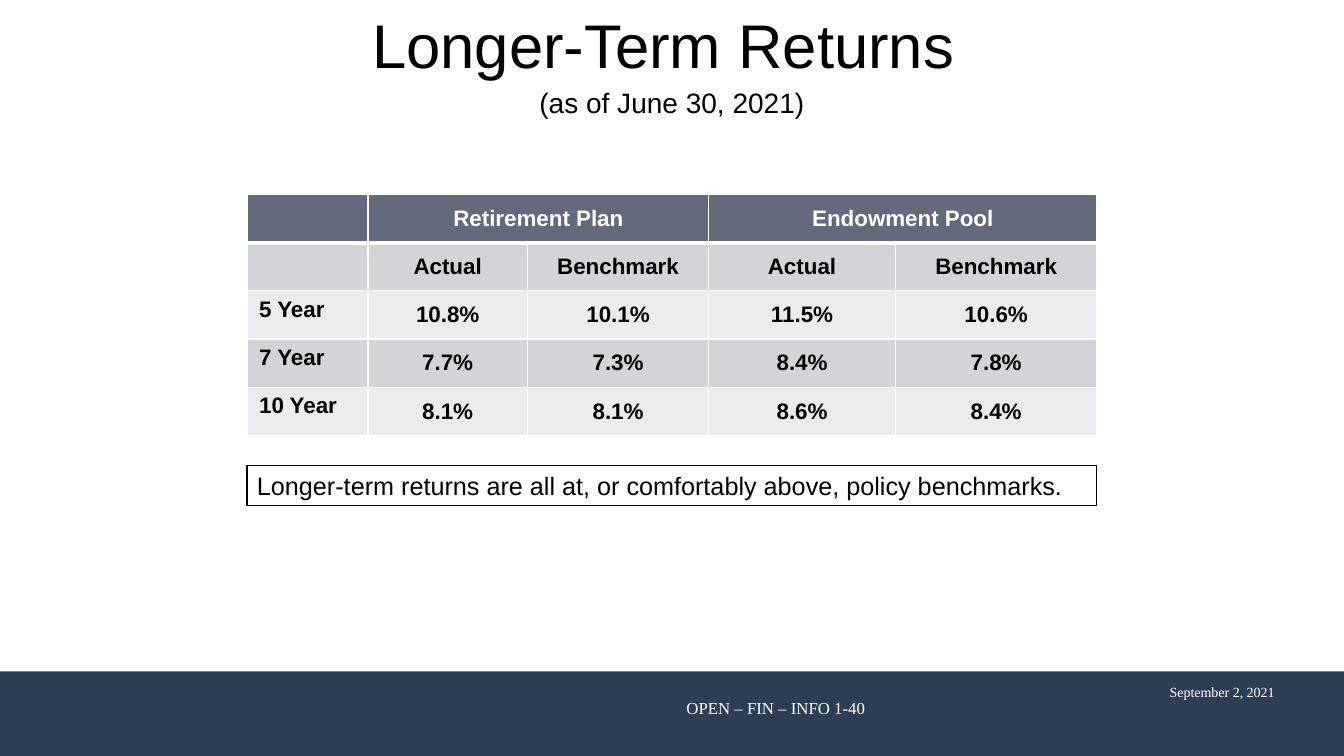
from lxml import etree
from pptx import Presentation
from pptx.dml.color import RGBColor
from pptx.enum.shapes import MSO_SHAPE
from pptx.enum.text import MSO_ANCHOR, MSO_AUTO_SIZE, PP_ALIGN
from pptx.oxml.ns import qn
from pptx.util import Inches, Pt

RECTANGLE = MSO_SHAPE.RECTANGLE
TOP, MIDDLE = MSO_ANCHOR.TOP, MSO_ANCHOR.MIDDLE
NO_FIT = MSO_AUTO_SIZE.NONE
LEFT, CENTER, RIGHT = PP_ALIGN.LEFT, PP_ALIGN.CENTER, PP_ALIGN.RIGHT

COLORS = {"navy": "2D3D54", "header": "64697C", "dark band": "D3D4D7",
          "light band": "EAEBEC", "white": "FFFFFF", "black": "000000"}
SANS, SERIF = "Arial", "Times New Roman"

RETURNS = [
    ["", "Retirement Plan", "", "Endowment Pool", ""],
    ["", "Actual", "Benchmark", "Actual", "Benchmark"],
    ["5 Year", "10.8%", "10.1%", "11.5%", "10.6%"],
    ["7 Year", "7.7%", "7.3%", "8.4%", "7.8%"],
    ["10 Year", "8.1%", "8.1%", "8.6%", "8.4%"],
]
COLUMN_WIDTHS = [1.2, 1.58, 1.8, 1.85, 2]


def color(name):
    return RGBColor.from_string(COLORS[name])


def format_paragraph(para, size, font, ink, align, bold=False):
    para.alignment = align
    for span in para.runs:
        span.font.size = Pt(size)
        span.font.name = font
        span.font.bold = bold
        span.font.color.rgb = color(ink)


def add_rectangle(page, box):
    shape = page.shapes.add_shape(RECTANGLE, *map(Inches, box))
    shape.shadow.inherit = False
    return shape


def add_label(page, box, text, size, align):
    label = page.shapes.add_textbox(*map(Inches, box))
    label.text_frame.word_wrap = True
    label.text_frame.text = text
    format_paragraph(label.text_frame.paragraphs[0], size, SERIF, "white", align)


def add_footer(page, box):
    left, top, width, height = box
    band = add_rectangle(page, box)
    band.fill.solid()
    band.fill.fore_color.rgb = color("navy")
    band.line.fill.background()
    add_label(page, (left + 11.23, top + 0.07, 1.51, 0.27), "September 2, 2021", 10, RIGHT)
    add_label(page, (left + 6.67, top + 0.21, 2.05, 0.3), "OPEN – FIN – INFO 1-40", 12, CENTER)


def fill_title(page, box):
    title = page.shapes.title
    title.left, title.top, title.width, title.height = map(Inches, box)
    frame = title.text_frame
    frame.auto_size = NO_FIT
    frame.vertical_anchor = MIDDLE
    frame.text = "Longer-Term Returns \n(as of June 30, 2021)"
    for para, size in zip(frame.paragraphs, (44, 20)):
        format_paragraph(para, size, SANS, "black", CENTER)
    frame.paragraphs[1].space_before = Pt(4)


def add_borders(cell, row):
    properties = cell._tc.get_or_add_tcPr()
    widths = {"L": 1, "R": 1, "T": 3 if row == 1 else 1, "B": 3 if row == 0 else 1}
    for side, width in widths.items():
        line = etree.SubElement(properties, qn(f"a:ln{side}"), w=str(Pt(width)))
        fill = etree.SubElement(line, qn("a:solidFill"))
        etree.SubElement(fill, qn("a:srgbClr"), val=COLORS["white"])


def format_cell(cell, text, row, column):
    add_borders(cell, row)
    band = "header" if row == 0 else "dark band" if row % 2 else "light band"
    cell.fill.solid()
    cell.fill.fore_color.rgb = color(band)
    cell.margin_left = cell.margin_right = Inches(0.12)
    cell.margin_top = cell.margin_bottom = Inches(0.06)
    cell.vertical_anchor = MIDDLE if column else TOP
    cell.text = text
    format_paragraph(cell.text_frame.paragraphs[0], 16, SANS,
                     "black" if row else "white", CENTER if column else LEFT, bold=True)


def add_returns_table(page, box):
    table = page.shapes.add_table(len(RETURNS), len(COLUMN_WIDTHS), *map(Inches, box)).table
    for column, width in zip(table.columns, COLUMN_WIDTHS):
        column.width = Inches(width)
    for row, values in enumerate(RETURNS):
        for column, text in enumerate(values):
            format_cell(table.cell(row, column), text, row, column)
    for first in (1, 3):  # each fund spans its actual and benchmark columns
        table.cell(0, first).merge(table.cell(0, first + 1))


def add_conclusion(page, box):
    note = add_rectangle(page, box)
    note.fill.background()
    note.line.color.rgb = color("black")
    note.line.width = Pt(0.75)
    frame = note.text_frame
    frame.word_wrap = True
    frame.vertical_anchor = TOP
    frame.text = "Longer-term returns are all at, or comfortably above, policy benchmarks."
    format_paragraph(frame.paragraphs[0], 18, SANS, "black", LEFT)


def build_returns_slide(deck):
    page = deck.slides.add_slide(deck.slide_layouts[5])
    add_footer(page, (0, 6.66, 13.33, 0.84))
    fill_title(page, (0, 0, 13.33, 1.25))
    add_returns_table(page, (2.45, 1.93, 8.43, 2.39))
    add_conclusion(page, (2.45, 4.62, 8.43, 0.4))


def main():
    deck = Presentation()
    deck.slide_width, deck.slide_height = Inches(13.33), Inches(7.5)
    build_returns_slide(deck)
    deck.save("out.pptx")


if __name__ == "__main__":
    main()
